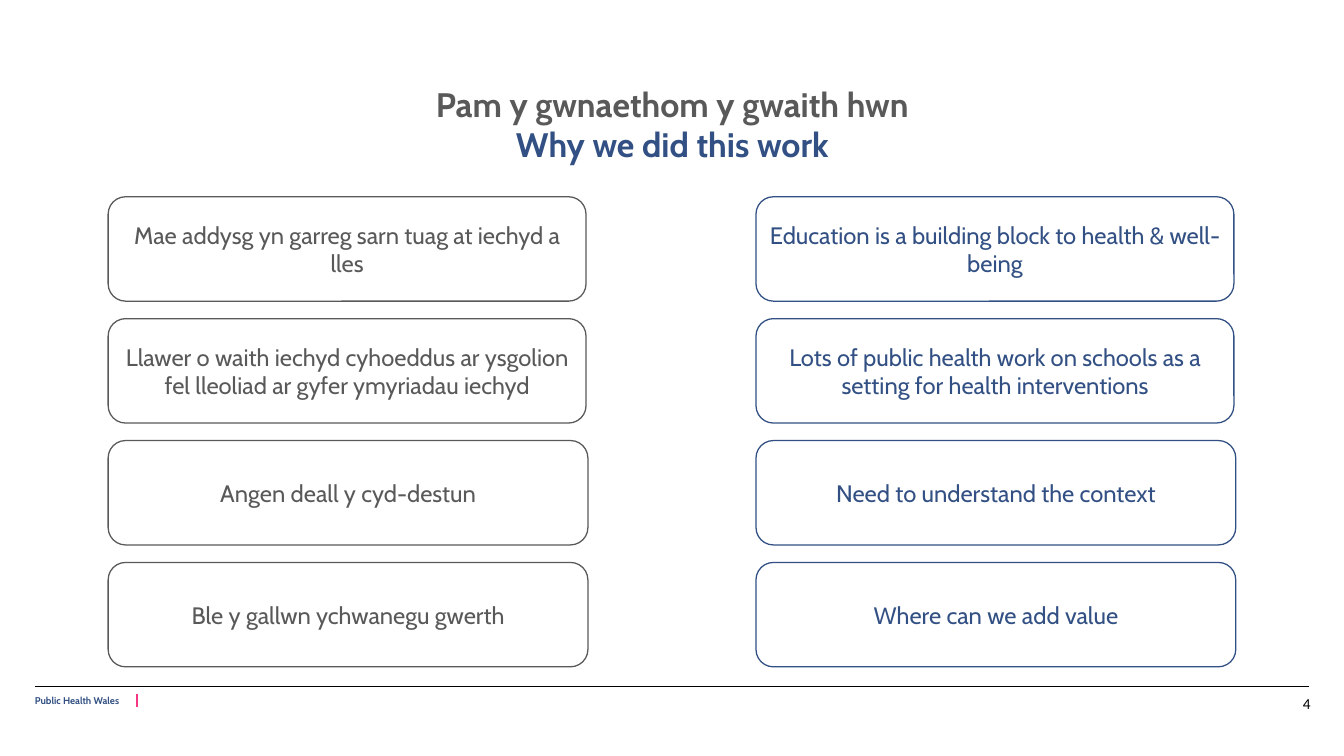
from dataclasses import dataclass

from lxml.etree import SubElement
from pptx import Presentation
from pptx.dml.color import RGBColor
from pptx.enum.shapes import MSO_CONNECTOR, MSO_SHAPE
from pptx.enum.text import MSO_ANCHOR, MSO_AUTO_SIZE, PP_ALIGN
from pptx.oxml.ns import qn
from pptx.slide import Slide
from pptx.text.text import TextFrame, _Paragraph
from pptx.util import Pt

COLOURS = {
    "grey": "595959",
    "blue": "325083",
    "pink": "F43882",
    "black": "000000",
}
CARD_TOP = 231.8
CARD_PITCH = 143.6
CARD_HEIGHT = 123
CARD_WIDTHS = (563, 563, 565.2, 565.2)


@dataclass
class Column:
    left: float
    colour: str
    messages: tuple[str, ...]


@dataclass
class Rule:
    start: tuple[float, float]
    end: tuple[float, float]
    colour: str
    width: float


@dataclass
class FooterLabel:
    text: str
    left: float
    width: float
    size: float
    font: str
    colour: str
    bold: bool


COLUMNS = (
    Column(127.4, "grey", (
        "Mae addysg yn garreg sarn tuag at iechyd a lles",
        "Llawer o waith iechyd cyhoeddus ar ysgolion fel lleoliad ar gyfer ymyriadau iechyd",
        "Angen deall y cyd-destun",
        "Ble y gallwn ychwanegu gwerth",
    )),
    Column(890.6, "blue", (
        "Education is a building block to health & well-being",
        "Lots of public health work on schools as a setting for health interventions",
        "Need to understand the context",
        "Where can we add value",
    )),
)
RULES = (
    Rule((41, 807.8), (1541.5, 807.8), "black", 0.41),
    Rule((161.3, 833), (161.3, 817.9), "pink", 1.65),
)
FOOTER_LABELS = (
    FooterLabel("Public Health Wales", 41, 111.6, 11.5, "Cabin", "blue", True),
    FooterLabel("4", 1535, 11, 18, "Calibri", "black", False),
)


def rgb(colour: str) -> RGBColor:
    return RGBColor.from_string(COLOURS[colour])


def format_text(paragraph: _Paragraph, size: float, colour: str,
                bold: bool = False, font: str = "Cabin") -> None:
    for run in paragraph.runs:
        run.font.name = font
        run.font.size = Pt(size)
        run.font.bold = bold
        run.font.color.rgb = rgb(colour)


def remove_margins(text_frame: TextFrame) -> None:
    text_frame.margin_left = text_frame.margin_right = 0
    text_frame.margin_top = text_frame.margin_bottom = 0


def add_title(slide: Slide) -> None:
    title = slide.shapes.title
    title.left, title.top = Pt(409.7), Pt(97.9)
    title.width, title.height = Pt(764.6), Pt(97.2)
    text_frame = title.text_frame
    text_frame.text = "Pam y gwnaethom y gwaith hwn\nWhy we did this work"
    text_frame.auto_size = MSO_AUTO_SIZE.NONE
    text_frame.vertical_anchor = MSO_ANCHOR.TOP
    remove_margins(text_frame)
    for paragraph, colour in zip(text_frame.paragraphs, ("grey", "blue")):
        paragraph.alignment = PP_ALIGN.CENTER
        paragraph.space_before = Pt(0)
        format_text(paragraph, 40, colour, bold=True)


def add_column(slide: Slide, column: Column) -> None:
    for row, (message, width) in enumerate(zip(column.messages, CARD_WIDTHS)):
        card = slide.shapes.add_shape(
            MSO_SHAPE.ROUNDED_RECTANGLE, Pt(column.left),
            Pt(CARD_TOP + row * CARD_PITCH), Pt(width), Pt(CARD_HEIGHT))
        card.shadow.inherit = False
        card.fill.background()
        card.line.color.rgb = rgb(column.colour)
        card.line.width = Pt(1.5)
        text_frame = card.text_frame
        text_frame.text = message
        text_frame.word_wrap = True
        text_frame.vertical_anchor = MSO_ANCHOR.MIDDLE
        paragraph = text_frame.paragraphs[0]
        paragraph.alignment = PP_ALIGN.CENTER
        format_text(paragraph, 28, column.colour)


def add_rule(slide: Slide, rule: Rule) -> None:
    start_x, start_y = rule.start
    end_x, end_y = rule.end
    connector = slide.shapes.add_connector(
        MSO_CONNECTOR.STRAIGHT, Pt(start_x), Pt(start_y), Pt(end_x), Pt(end_y))
    connector.line.color.rgb = rgb(rule.colour)
    connector.line.width = Pt(rule.width)
    SubElement(connector._element.spPr, qn("a:effectLst"))


def add_footer_label(slide: Slide, label: FooterLabel) -> None:
    text_box = slide.shapes.add_textbox(
        Pt(label.left), Pt(818), Pt(label.width), Pt(15.1))
    text_frame = text_box.text_frame
    text_frame.text = label.text
    text_frame.word_wrap = True
    remove_margins(text_frame)
    format_text(text_frame.paragraphs[0], label.size, label.colour,
                label.bold, label.font)


def main() -> None:
    presentation = Presentation()
    presentation.slide_width, presentation.slide_height = Pt(1583.28), Pt(890.64)
    title_only = presentation.slide_layouts[5]
    slide = presentation.slides.add_slide(title_only)
    for rule in RULES:
        add_rule(slide, rule)
    add_title(slide)
    for label in FOOTER_LABELS:
        add_footer_label(slide, label)
    for column in COLUMNS:
        add_column(slide, column)
    presentation.save("out.pptx")


if __name__ == "__main__":
    main()
